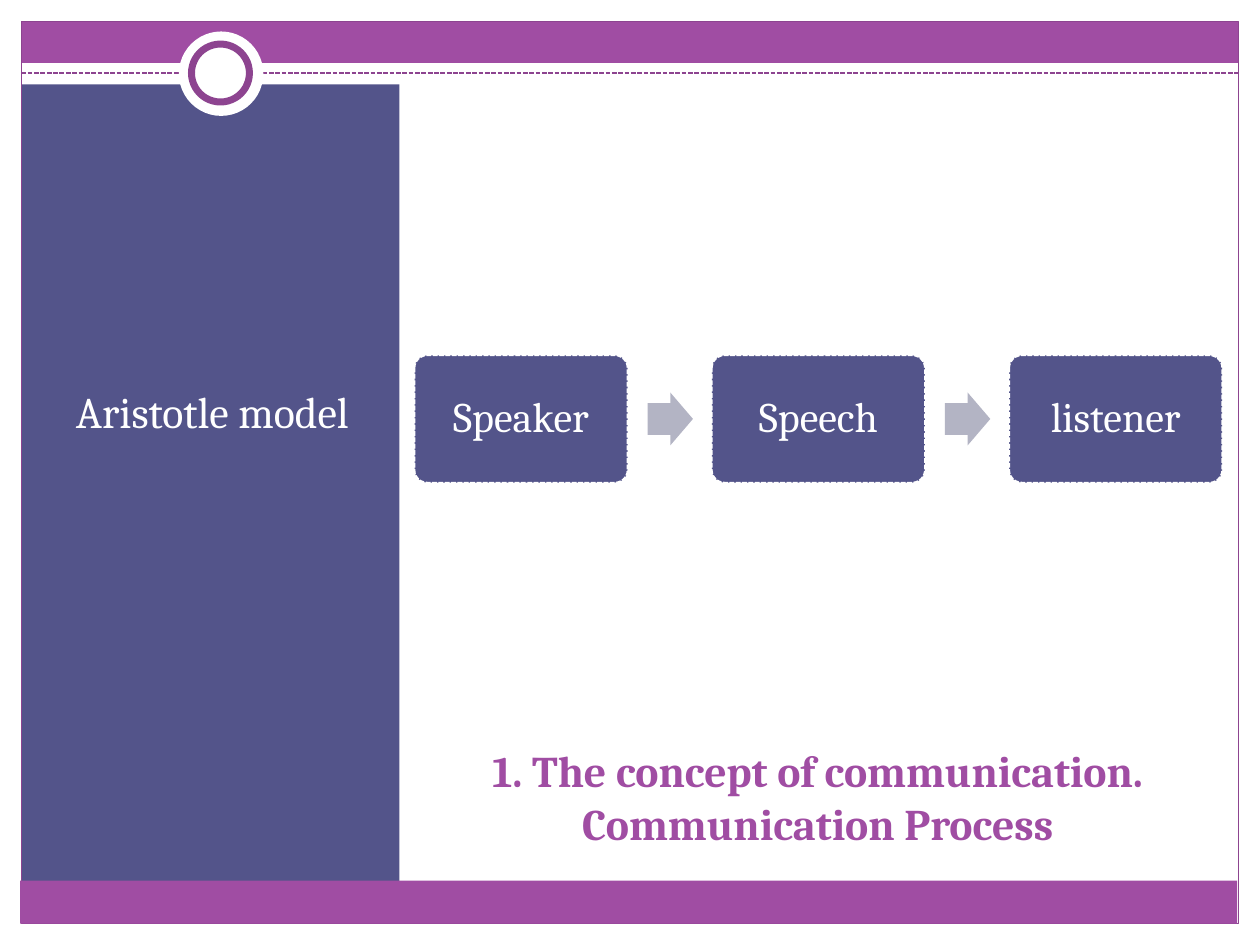
from lxml.etree import SubElement
from pptx import Presentation
from pptx.dml.color import RGBColor
from pptx.enum.dml import MSO_LINE
from pptx.enum.shapes import MSO_CONNECTOR, MSO_SHAPE
from pptx.enum.text import MSO_ANCHOR, MSO_AUTO_SIZE, PP_ALIGN
from pptx.oxml.ns import qn
from pptx.util import Inches, Pt

TITLE = "1. The concept of communication. Communication Process"
MODEL = "Aristotle model"
STEPS = ["Speaker", "Speech", "listener"]

PURPLE, DARK_PURPLE, INDIGO = "A04DA3", "8D4490", "53548A"
GREY, WHITE = "B3B4C4", "FFFFFF"

# preset, (left, top, width, height), fill, line colour, line width
FRAME = [
    (MSO_SHAPE.RECTANGLE, (0.17, 0.17, 9.66, 0.33), PURPLE, None, 0),
    (MSO_SHAPE.RECTANGLE, (0.17, 0.67, 3, 6.42), INDIGO, None, 0),
    (MSO_SHAPE.RECTANGLE, (0.17, 0.17, 9.66, 7.16), None, DARK_PURPLE, 0.75),
    (MSO_SHAPE.OVAL, (1.42, 0.25, 0.67, 0.67), WHITE, None, 0),
    (MSO_SHAPE.OVAL, (1.52, 0.35, 0.46, 0.46), WHITE, DARK_PURPLE, 4),
    (MSO_SHAPE.RECTANGLE, (0.16, 6.99, 9.66, 0.34), PURPLE, None, 0),
]

STEP_LEFT, STEP_PITCH, MIDDLE = 3.29, 2.36, 3.325
STEP_WIDTH, STEP_HEIGHT = 1.69, 1.01
ARROW_WIDTH, ARROW_HEIGHT, ARROW_OFFSET = 0.36, 0.42, 1.85


def color(value):
    return RGBColor.from_string(value)


def add_shape(slide, preset, place, fill=None, line=None, width=0):
    shape = slide.shapes.add_shape(preset, *map(Inches, place))
    shape.shadow.inherit = False
    if fill:
        shape.fill.solid()
        shape.fill.fore_color.rgb = color(fill)
    else:
        shape.fill.background()
    if line:
        shape.line.color.rgb = color(line)
        shape.line.width = Pt(width)
    else:
        shape.line.fill.background()
    return shape


def write(shape, text, font_format, font_color, inset=0.1, bottom=None):
    """Put one centred paragraph in the middle of the shape."""
    frame = shape.text_frame
    frame_format = {
        "word_wrap": True,
        "auto_size": MSO_AUTO_SIZE.NONE,
        "vertical_anchor": MSO_ANCHOR.MIDDLE,
        "margin_left": Inches(inset),
        "margin_right": Inches(inset),
        "margin_top": Inches(0.05),
        "margin_bottom": Inches(0.05 if bottom is None else bottom),
    }
    for name, value in frame_format.items():
        setattr(frame, name, value)
    para = frame.paragraphs[0]
    para.alignment = PP_ALIGN.CENTER
    para.space_before = Pt(0)
    span = para.add_run()
    span.text = text
    for name, value in {"name": "Cambria", **font_format}.items():
        setattr(span.font, name, value)
    span.font.color.rgb = color(font_color)
    return para


def place_placeholder(slide, placeholder, place):
    """Move the placeholder and bring it in front of the frame."""
    left, top, width, height = map(Inches, place)
    placeholder.left, placeholder.top = left, top
    placeholder.width, placeholder.height = width, height
    slide.shapes._spTree.append(placeholder._element)


def add_dashed_rule(slide):
    rule = slide.shapes.add_connector(
        MSO_CONNECTOR.STRAIGHT, *map(Inches, (0.17, 0.58, 9.83, 0.58)))
    rule.line.color.rgb = color(DARK_PURPLE)
    rule.line.width = Pt(0.9)
    rule.line.dash_style = MSO_LINE.SQUARE_DOT
    SubElement(rule._element.spPr, qn("a:effectLst"))


def add_steps(slide):
    for index, step in enumerate(STEPS):
        left = STEP_LEFT + index * STEP_PITCH
        box = add_shape(
            slide, MSO_SHAPE.ROUNDED_RECTANGLE,
            (left, MIDDLE - STEP_HEIGHT / 2, STEP_WIDTH, STEP_HEIGHT),
            INDIGO, WHITE, 0.9)
        box.adjustments[0] = 0.1
        box.line.dash_style = MSO_LINE.SQUARE_DOT
        para = write(box, step, {"size": Pt(24)}, WHITE)
        para.line_spacing = 0.9
        if index < len(STEPS) - 1:
            arrow = add_shape(
                slide, MSO_SHAPE.RIGHT_ARROW,
                (left + ARROW_OFFSET, MIDDLE - ARROW_HEIGHT / 2,
                 ARROW_WIDTH, ARROW_HEIGHT), GREY)
            arrow.adjustments[0] = 0.6


def main():
    deck = Presentation()
    deck.slide_width, deck.slide_height = Inches(10), Inches(7.5)
    slide = deck.slides.add_slide(deck.slide_layouts[1])
    title, body = slide.placeholders

    add_dashed_rule(slide)
    for part in FRAME:
        add_shape(slide, *part)

    place_placeholder(slide, title, (3.28, 5.8, 6.42, 1.04))
    write(title, TITLE, {"size": Pt(25), "bold": True}, PURPLE)
    add_steps(slide)

    place_placeholder(slide, body, (0.28, 1.08, 2.81, 5.75))
    para = write(body, MODEL, {"size": Pt(25)}, WHITE, bottom=1.43)
    properties = para._p.get_or_add_pPr()
    properties.set("marL", "0")
    properties.set("indent", "0")
    SubElement(properties, qn("a:buNone"))

    deck.save("out.pptx")


if __name__ == "__main__":
    main()
